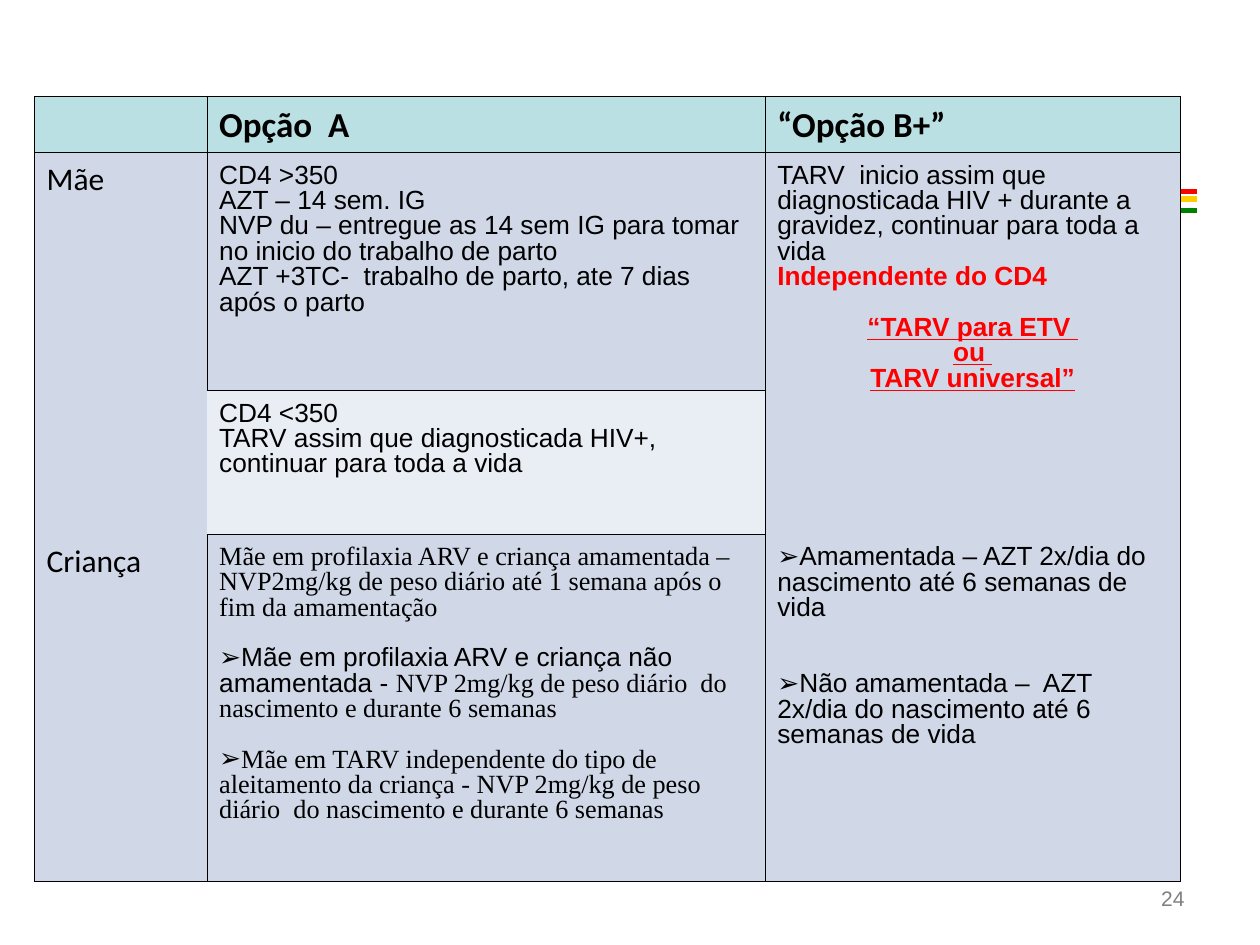
"""Build a slide comparing option A and option B+ for mother and child."""
from pptx import Presentation
from pptx.dml.color import RGBColor as RGB
from pptx.enum.shapes import MSO_CONNECTOR as Link
from pptx.enum.text import PP_ALIGN as Align
from pptx.oxml.ns import qn
from pptx.util import Inches, Pt
from lxml.etree import SubElement as Sub, Element

COLORS = {"head": "BBE0E3", "band": "D0D8E8", "pale": "E9EDF4", "text": "000000",
          "red": "FF0000", "gold": "FFCC00", "green": "008000", "gray": "808080"}
SANS, SERIF, TITLE = "Arial", "Times New Roman", "Calibri"
LINE = 14.5


def style(run, face, size, color="text", bold=False, under=False):
    font = run.font
    font.name, font.size, font.bold, font.underline = face, Pt(size), bold, under
    font.color.rgb = RGB.from_string(COLORS[color])


def edge(cell, sides):
    props = cell._tc.get_or_add_tcPr()
    for spot, side in enumerate("LRTB"):
        line = Element(qn(f"a:ln{side}"), w=str(Pt(0.06)))
        if side in sides:
            fill = Sub(line, qn("a:solidFill"))
            Sub(fill, qn("a:srgbClr"), val=COLORS["text"])
        else:
            Sub(line, qn("a:noFill"))
        props.insert(spot, line)


deck = Presentation()
deck.slide_width, deck.slide_height = Inches(10), Inches(7.5)
slide = deck.slides.add_slide(deck.slide_layouts[6])

for color, y in [("gold", 1.58), ("red", 1.52), ("green", 1.67)]:
    rule = slide.shapes.add_connector(
        Link.STRAIGHT, Inches(0.5), Inches(y), Inches(9.5), Inches(y))
    rule.line.color.rgb = RGB.from_string(COLORS[color])
    rule.line.width = Pt(3)
    Sub(rule._element.spPr, qn("a:effectLst"))

box = slide.shapes.add_textbox(Inches(8.33), Inches(6.98), Inches(1.17), Inches(0.52))
box.text_frame.word_wrap = True
para = box.text_frame.paragraphs[0]
para.text = "24"
para.alignment = Align.RIGHT
style(para.runs[0], SANS, 12, "gray")

cols = [1.37, 4.43, 3.3]
rows = [0.45, 1.89, 1.14, 2.75]
frame = slide.shapes.add_table(len(rows), len(cols), Inches(0.27), Inches(0.76),
                               Inches(sum(cols)), Inches(sum(rows)))
table = frame.table
table.first_row = table.horz_banding = False
for col, width in zip(table.columns, cols):
    col.width = Inches(width)
for row, height in zip(table.rows, rows):
    row.height = Inches(height)

fills = [["head"] * 3, ["band"] * 3, ["band", "pale", "band"], ["band"] * 3]
sides = [["LRTB"] * 3, ["LTR", "LRTB", "LTR"], ["L", "TRB", "LR"], ["LRB", "LRTB", "LRB"]]
for r, names in enumerate(fills):
    for c, name in enumerate(names):
        cell = table.cell(r, c)
        cell.fill.solid()
        cell.fill.fore_color.rgb = RGB.from_string(COLORS[name])
        edge(cell, sides[r][c])
for c in (0, 2):
    table.cell(1, c).merge(table.cell(2, c))

labels = {(0, 1): ("Opção  A", 20, True), (0, 2): ("“Opção B+”", 20, True),
          (1, 0): ("Mãe", 18, False), (3, 0): ("Criança", 18, False)}
for spot, (text, size, bold) in labels.items():
    para = table.cell(*spot).text_frame.paragraphs[0]
    para.text = text
    para.line_spacing = 1.04
    style(para.runs[0], TITLE, size, bold=bold)

plain, loud, call = (SANS, 15), (SANS, 15, "red", True), (SANS, 15, "red", True, True)
roman = (SERIF, 15)
bodies = {
    (1, 1): [
        ("", 0, [("CD4 >350", plain)]),
        ("", 0, [("AZT – 14 sem. IG", plain)]),
        ("", 0, [("NVP du – entregue as 14 sem IG para tomar no inicio do trabalho de parto",
                  plain)]),
        ("", 0, [("AZT +3TC-  trabalho de parto, ate 7 dias após o parto", plain)])],
    (1, 2): [
        ("", 0, [("TARV  inicio assim que diagnosticada HIV + durante a gravidez, "
                  "continuar para toda a vida", plain)]),
        ("", 0, [("Independente do CD4", loud)]),
        ("center", 1, [("“TARV para ETV ", call)]),
        ("center", 0, [("ou ", call)]),
        ("center", 0, [("TARV universal”", call)])],
    (2, 1): [
        ("", 0, [("CD4 <350", plain)]),
        ("", 0, [("TARV assim que diagnosticada HIV+, continuar para toda a vida", plain)])],
    (3, 1): [
        ("", 0, [("Mãe em profilaxia ARV e criança amamentada – NVP2mg/kg de peso diário "
                  "até 1 semana após o fim da amamentação", roman)]),
        ("bullet", 1, [("Mãe em profilaxia ARV e criança não amamentada - ", plain),
                       ("NVP 2mg/kg de peso diário  do nascimento e durante 6 semanas",
                        roman)]),
        ("bullet", 1, [("Mãe em TARV independente do tipo de aleitamento da criança - "
                        "NVP 2mg/kg de peso diário  do nascimento e durante 6 semanas",
                        roman)])],
    (3, 2): [
        ("bullet", 0, [("Amamentada – AZT 2x/dia do nascimento até 6 semanas de vida",
                        plain)]),
        ("bullet", 2, [("Não amamentada –  AZT 2x/dia do nascimento até 6 semanas de vida",
                        plain)])],
}
for spot, paras in bodies.items():
    cell = table.cell(*spot)
    cell.margin_top = Inches(0.09)
    text = cell.text_frame
    for i, (kind, gap, parts) in enumerate(paras):
        para = text.add_paragraph() if i else text.paragraphs[0]
        para.line_spacing = 0.87
        para.space_before = Pt(gap * LINE)
        if kind == "center":
            para.alignment = Align.CENTER
        if kind == "bullet":
            props = para._p.get_or_add_pPr()
            props.set("marL", "0")
            props.set("indent", "0")
            tint = Sub(props, qn("a:buClr"))
            Sub(tint, qn("a:srgbClr"), val=COLORS["text"])
            Sub(props, qn("a:buFont"), typeface=SANS)
            Sub(props, qn("a:buChar"), char="➢")
        for words, look in parts:
            run = para.add_run()
            run.text = words
            style(run, *look)

deck.save("out.pptx")
